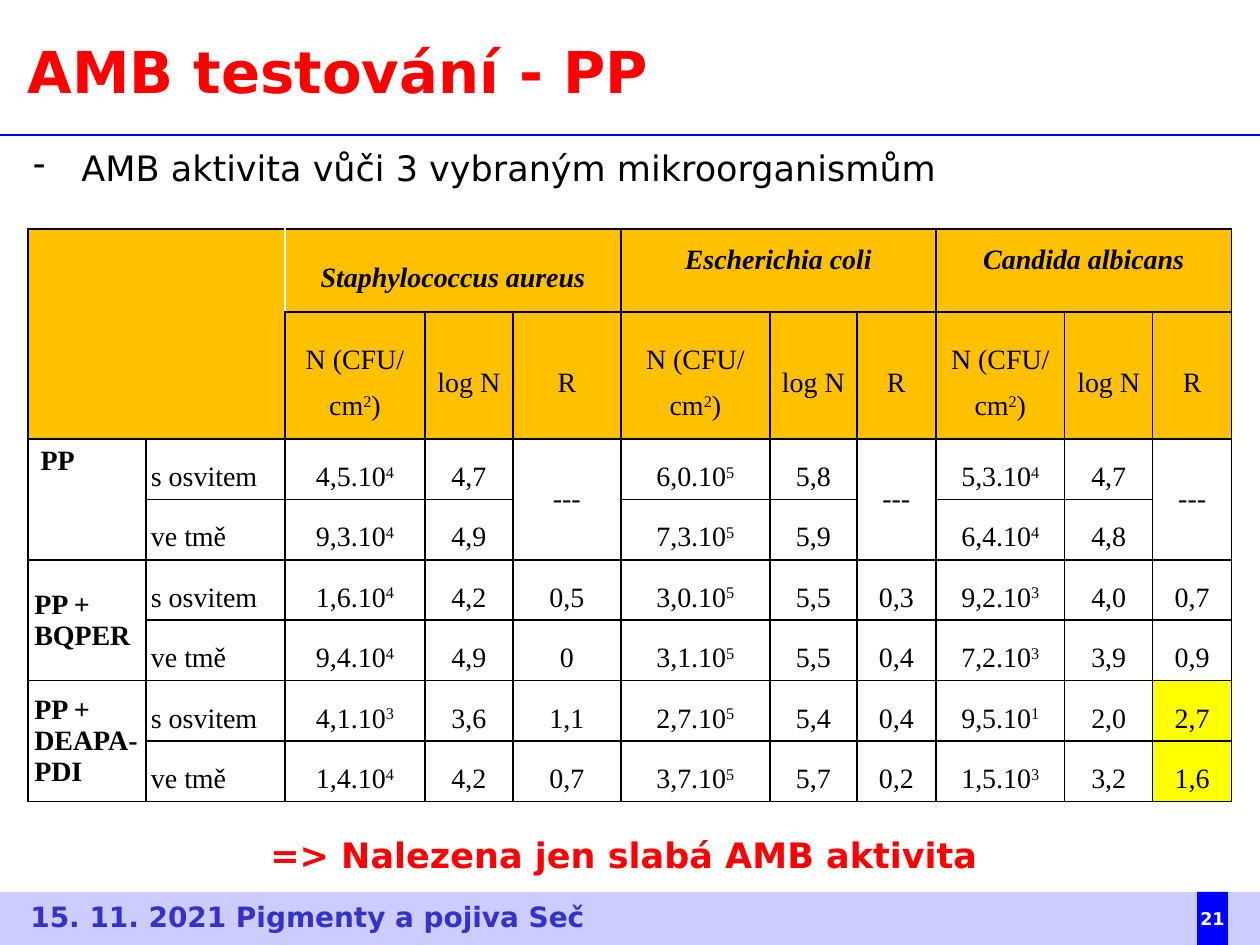
import pptx
import pptx.dml.color
import pptx.enum.shapes
import pptx.enum.text
import pptx.oxml
import pptx.oxml.ns
import pptx.util

RGB = pptx.dml.color.RGBColor
ALIGN = pptx.enum.text.PP_ALIGN
ANCHOR = pptx.enum.text.MSO_ANCHOR
SHAPE = pptx.enum.shapes.MSO_SHAPE

RED = RGB(0xFF, 0, 0)
BLUE = RGB(0, 0, 0xFF)
INDIGO = RGB(0x33, 0x33, 0xCC)
LAVENDER = RGB(0xCC, 0xCC, 0xFF)
AMBER = RGB(0xFF, 0xC0, 0)
YELLOW = RGB(0xFF, 0xFF, 0)
WHITE = RGB(0xFF, 0xFF, 0xFF)
BLACK = RGB(0, 0, 0)

SANS = "DejaVu Sans"
SERIF = "Times New Roman"
PX = 914400 // 126

COL_WIDTHS = [118, 139, 140, 88, 108, 149, 87, 79, 129, 88, 79]
ROW_HEIGHTS = [83, 127] + [60] * 6
SPECIES = ["Staphylococcus aureus", "Escherichia coli", "Candida albicans"]
MEASURES = ["N (CFU/ cm^2^)", "log N", "R"]
MATERIALS = ["PP", "PP +\nBQPER", "PP + DEAPA-PDI"]
LIGHTING = ["s osvitem", "ve tmě"]
# A caret switches superscript on and off
RESULTS = [
    ["4,5.10^4", "4,7", "---", "6,0.10^5", "5,8", "---", "5,3.10^4", "4,7", "---"],
    ["9,3.10^4", "4,9", "", "7,3.10^5", "5,9", "", "6,4.10^4", "4,8", ""],
    ["1,6.10^4", "4,2", "0,5", "3,0.10^5", "5,5", "0,3", "9,2.10^3", "4,0", "0,7"],
    ["9,4.10^4", "4,9", "0", "3,1.10^5", "5,5", "0,4", "7,2.10^3", "3,9", "0,9"],
    ["4,1.10^3", "3,6", "1,1", "2,7.10^5", "5,4", "0,4", "9,5.10^1", "2,0", "2,7"],
    ["1,4.10^4", "4,2", "0,7", "3,7.10^5", "5,7", "0,2", "1,5.10^3", "3,2", "1,6"],
]


def px(*values):
    return [pptx.util.Emu(v * PX) for v in values]


def style(font, size, color, name=SANS, bold=False, italic=False):
    font.size, font.name = pptx.util.Pt(size), name
    font.bold, font.italic = bold, italic
    font.color.rgb = color


def add_text(slide, box, text, size, color, bold=True, wrap=True, spacing=0.87, bullet=None):
    tf = slide.shapes.add_textbox(*px(*box)).text_frame
    tf.word_wrap = wrap
    tf.auto_size = pptx.enum.text.MSO_AUTO_SIZE.SHAPE_TO_FIT_TEXT
    p = tf.paragraphs[0]
    p.text = text
    p.line_spacing = spacing
    if bullet:
        pPr = p._p.get_or_add_pPr()
        indent = px(48)[0]
        pPr.set("marL", str(indent))
        pPr.set("indent", str(-indent))
        pPr.append(pptx.oxml.parse_xml(
            f'<a:buChar {pptx.oxml.ns.nsdecls("a")} char="{bullet}"/>'))
    style(p.runs[0].font, size, color, bold=bold)


def add_rect(slide, box, fill):
    sp = slide.shapes.add_shape(SHAPE.RECTANGLE, *px(*box))
    sp.shadow.inherit = False
    sp.fill.solid()
    sp.fill.fore_color.rgb = fill
    sp.line.fill.background()
    return sp


def add_rule(slide, y, color):
    line = slide.shapes.add_connector(
        pptx.enum.shapes.MSO_CONNECTOR.STRAIGHT, *px(0, y, 1260, y))
    line.line.color.rgb = color
    line.line.width = pptx.util.Pt(1)
    line._element.spPr.append(
        pptx.oxml.parse_xml(f'<a:effectLst {pptx.oxml.ns.nsdecls("a")}/>'))


def format_cell(cell, fill, white_edge=""):
    tcPr = cell._tc.get_or_add_tcPr()
    for edge in "LRTB":
        color = WHITE if edge == white_edge else BLACK
        tcPr.append(pptx.oxml.parse_xml(
            f'<a:ln{edge} {pptx.oxml.ns.nsdecls("a")} w="12700"><a:solidFill>'
            f'<a:srgbClr val="{color}"/></a:solidFill></a:ln{edge}>'))
    cell.fill.solid()
    cell.fill.fore_color.rgb = fill


def write_cell(cell, text, margins, anchor=ANCHOR.MIDDLE, align=ALIGN.CENTER,
               spacing=1.5, bold=False, italic=False):
    cell.margin_left = cell.margin_right = pptx.util.Inches(margins[0])
    cell.margin_top = cell.margin_bottom = pptx.util.Inches(margins[1])
    cell.vertical_anchor = anchor
    tf = cell.text_frame
    for i, row in enumerate(text.split("\n")):
        p = tf.add_paragraph() if i else tf.paragraphs[0]
        p.alignment = align
        p.line_spacing = spacing
        for j, part in enumerate(row.split("^")):
            r = p.add_run()
            r.text = part
            style(r.font, 16, BLACK, SERIF, bold, italic)
            if j % 2:
                r._r.get_or_add_rPr().set("baseline", "30000")


def add_results_table(slide):
    box = px(28, 229, sum(COL_WIDTHS), sum(ROW_HEIGHTS))
    table = slide.shapes.add_table(len(ROW_HEIGHTS), len(COL_WIDTHS), *box).table
    table.first_row = table.horz_banding = False
    for col, width in zip(table.columns, px(*COL_WIDTHS)):
        col.width = width
    for row, height in zip(table.rows, px(*ROW_HEIGHTS)):
        row.height = height

    # Fills and borders
    last = len(COL_WIDTHS) - 1
    for r in range(len(ROW_HEIGHTS)):
        for c in range(len(COL_WIDTHS)):
            fill = AMBER if r < 2 else YELLOW if r >= 6 and c == last else WHITE
            white_edge = {0: "R", 1: "R", 2: "L"}.get(c, "") if r == 0 else ""
            format_cell(table.cell(r, c), fill, white_edge)

    # Header: species above their three measures
    header = (0.05, 0)
    table.cell(0, 0).merge(table.cell(1, 1))
    for i, species in enumerate(SPECIES):
        c = 2 + 3 * i
        table.cell(0, c).merge(table.cell(0, c + 2))
        write_cell(table.cell(0, c), species, header, bold=True, italic=True,
                   anchor=ANCHOR.TOP if i else ANCHOR.MIDDLE)
        for j, measure in enumerate(MEASURES):
            write_cell(table.cell(1, c + j), measure, header)

    # Materials, each spanning its two lighting rows
    for i, material in enumerate(MATERIALS):
        r = 2 + 2 * i
        table.cell(r, 0).merge(table.cell(r + 1, 0))
        write_cell(table.cell(r, 0), material, header if i else (0.1, 0.05),
                   anchor=ANCHOR.MIDDLE if i else ANCHOR.TOP,
                   align=ALIGN.LEFT, spacing=1.0, bold=True)

    # Measured values
    body = (0.04, 0.04)
    for i, values in enumerate(RESULTS):
        r = 2 + i
        write_cell(table.cell(r, 1), LIGHTING[i % 2], body, align=ALIGN.LEFT)
        for c, value in enumerate(values, start=2):
            if value == "---":
                table.cell(r, c).merge(table.cell(r + 1, c))
            if value:
                write_cell(table.cell(r, c), value, body,
                           spacing=1.0 if value == "---" else 1.5)


def add_footer(slide):
    add_rect(slide, (0, 892, 1260, 53), LAVENDER)
    sp = add_rect(slide, (1197, 892, 31, 53), BLUE)
    tf = sp.text_frame
    tf.word_wrap = False
    tf.vertical_anchor = ANCHOR.MIDDLE
    tf.text = "21"
    tf.paragraphs[0].alignment = ALIGN.CENTER
    style(tf.paragraphs[0].runs[0].font, 10, WHITE, bold=True)
    add_text(slide, (18, 897, 587, 43), "15. 11. 2021 Pigmenty a pojiva Seč",
             16, INDIGO, wrap=False, spacing=0.9)


def main():
    prs = pptx.Presentation()
    prs.slide_width, prs.slide_height = px(1260, 945)
    slide = prs.slides.add_slide(prs.slide_layouts[6])
    add_footer(slide)
    add_rule(slide, 135, BLUE)
    add_results_table(slide)
    # Title, introduction and conclusion
    add_text(slide, (15, 35, 648, 79), "AMB testování - PP", 33, RED,
             wrap=False, spacing=0.95)
    add_text(slide, (21, 146, 1216, 50), "AMB aktivita vůči 3 vybraným mikroorganismům",
             20, BLACK, bold=False, bullet="-")
    add_text(slide, (258, 833, 745, 50), "=> Nalezena jen slabá AMB aktivita", 20, RED)
    prs.save("out.pptx")


if __name__ == "__main__":
    main()
